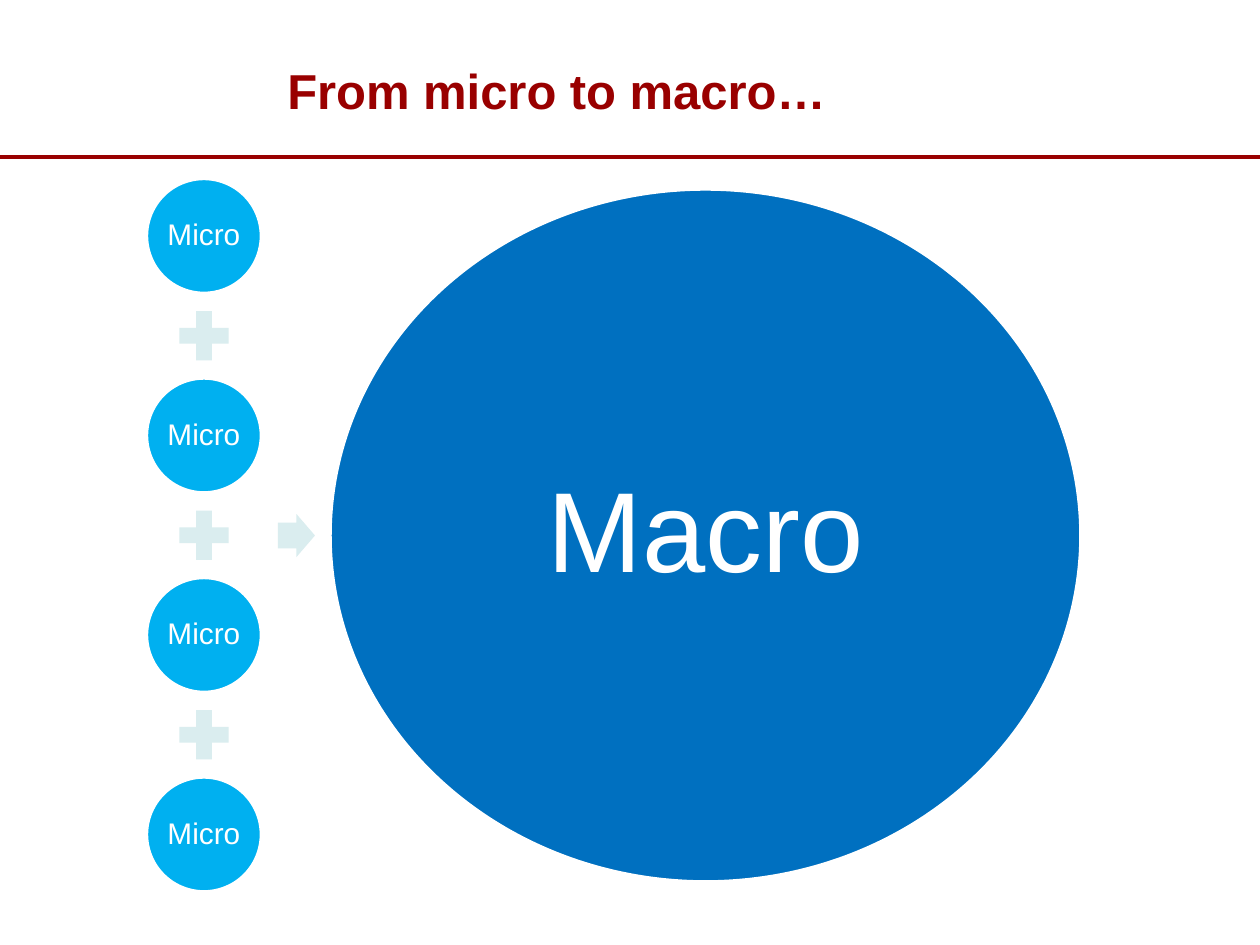
from lxml.etree import SubElement
from pptx import Presentation
from pptx.dml.color import RGBColor
from pptx.enum.shapes import MSO_CONNECTOR, MSO_SHAPE
from pptx.enum.text import MSO_ANCHOR, PP_ALIGN
from pptx.oxml.ns import qn
from pptx.util import Emu, Pt

DARK_RED = RGBColor(0x99, 0x00, 0x00)
SKY = RGBColor(0x00, 0xB0, 0xF0)
BLUE = RGBColor(0x00, 0x70, 0xC0)
PALE = RGBColor(0xDA, 0xED, 0xEF)
WHITE = RGBColor(0xFF, 0xFF, 0xFF)

PX = 914400 / 126


def px(*lengths):
    """Turn px lengths into EMU."""
    return [Emu(round(length * PX)) for length in lengths]


def add_figure(kind, box, fill, label="", size=0, inset=0):
    """Add a filled shape; a labelled one also gets a white outline."""
    figure = slide.shapes.add_shape(kind, *px(*box))
    figure.shadow.inherit = False
    figure.fill.solid()
    figure.fill.fore_color.rgb = fill
    if not label:
        figure.line.fill.background()
        return figure
    figure.line.color.rgb = WHITE
    figure.line.width = Pt(2)
    frame = figure.text_frame
    frame.text = label
    frame.word_wrap = False
    frame.vertical_anchor = MSO_ANCHOR.MIDDLE
    (frame.margin_left, frame.margin_top,
     frame.margin_right, frame.margin_bottom) = px(*[inset] * 4)
    paragraph = frame.paragraphs[0]
    paragraph.alignment = PP_ALIGN.CENTER
    paragraph.line_spacing = 0.9
    paragraph.font.name = "Arial"
    paragraph.font.size = Pt(size)
    paragraph.font.color.rgb = WHITE
    return figure


prs = Presentation()
prs.slide_width, prs.slide_height = px(1260, 945)
slide = prs.slides.add_slide(prs.slide_layouts[5])

# Title and rule
title = slide.shapes.title
title.left, title.top, title.width, title.height = px(42, 63, 1029, 63)
title.text_frame.text = "From micro to macro…"
title.text_frame.word_wrap = True
title.text_frame.vertical_anchor = MSO_ANCHOR.BOTTOM
heading = title.text_frame.paragraphs[0]
heading.alignment = PP_ALIGN.CENTER
heading.font.name = "Arial"
heading.font.size = Pt(28)
heading.font.bold = True
heading.font.color.rgb = DARK_RED

rule = slide.shapes.add_connector(MSO_CONNECTOR.STRAIGHT, *px(0, 157, 1260, 157))
rule.line.color.rgb = DARK_RED
rule.line.width = Pt(2.25)
SubElement(rule._element.spPr, qn("a:effectLst"))

# Column of micro circles with plus signs halfway between them
MICRO_COUNT = 4
MICRO_SIZE, PLUS_SIZE = 115, 67
COLUMN_CENTER, FIRST_CENTER, PITCH = 204, 236, 199.5
for i in range(MICRO_COUNT):
    middle = FIRST_CENTER + i * PITCH
    add_figure(MSO_SHAPE.OVAL,
               (COLUMN_CENTER - MICRO_SIZE / 2, middle - MICRO_SIZE / 2,
                MICRO_SIZE, MICRO_SIZE),
               SKY, "Micro", size=17, inset=2)
    if i < MICRO_COUNT - 1:
        add_figure(MSO_SHAPE.MATH_PLUS,
                   (COLUMN_CENTER - PLUS_SIZE / 2,
                    middle + PITCH / 2 - PLUS_SIZE / 2, PLUS_SIZE, PLUS_SIZE),
                   PALE)

# Arrow to the macro circle
arrow = add_figure(MSO_SHAPE.RIGHT_ARROW, (278, 514, 37, 43), PALE)
arrow.adjustments[0] = 0.6
arrow.adjustments[1] = 0.5
add_figure(MSO_SHAPE.OVAL, (330, 189, 751, 693), BLUE, "Macro", size=65, inset=11)

prs.save("out.pptx")
